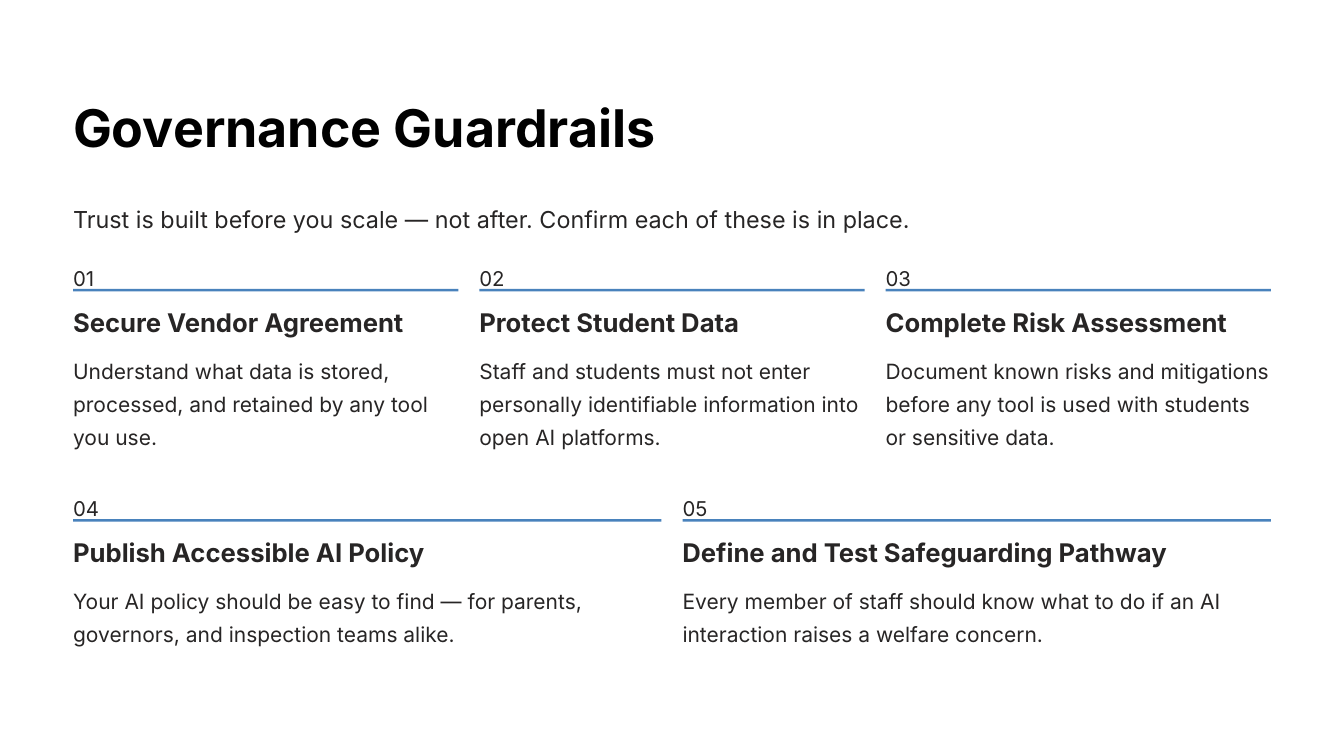
import pptx
import pptx.util
import pptx.dml.color
import pptx.enum.shapes

TITLE = "Governance Guardrails"
LEAD = "Trust is built before you scale — not after. Confirm each of these is in place."
ROWS = [
    (3.06, 1.19, [
        ("01", "Secure Vendor Agreement", 4,
         "Understand what data is stored, processed, and retained by any tool you use."),
        ("02", "Protect Student Data", 3.14,
         "Staff and students must not enter personally identifiable information into open AI platforms."),
        ("03", "Complete Risk Assessment", 4.13,
         "Document known risks and mitigations before any tool is used with students or sensitive data."),
    ]),
    (5.8, 0.79, [
        ("04", "Publish Accessible AI Policy", 4.25,
         "Your AI policy should be easy to find — for parents, governors, and inspection teams alike."),
        ("05", "Define and Test Safeguarding Pathway", 5.86,
         "Every member of staff should know what to do if an AI interaction raises a welfare concern."),
    ]),
]

THEME = {
    "font": "Inter",
    "paper": "FFFFFF",
    "rule": "4982BC",
    "title": (44.5, 55.5, "000000", True),
    "lead": (20, 28.5, "272525", False),
    "num": (17.5, 28.5, "272525", False),
    "head": (22, 27.5, "272525", True),
    "body": (18, 28.5, "272525", False),
}
WIDE, HIGH = 16, 9
LEFT, WIDTH, GAP = 0.87, 14.26, 0.25
Inches = pptx.util.Inches
Pt = pptx.util.Pt
color = pptx.dml.color.RGBColor.from_string


def add_text(slide, text, style, x, y, w, h, wrap=False):
    size, line, ink, bold = THEME[style]
    box = slide.shapes.add_textbox(Inches(x), Inches(y), Inches(w), Inches(h))
    frame = box.text_frame
    frame.text = text
    frame.word_wrap = wrap
    frame.margin_left = frame.margin_right = 0
    frame.margin_top = frame.margin_bottom = 0
    para = frame.paragraphs[0]
    para.line_spacing = Pt(line)
    font = para.runs[0].font
    font.name = THEME["font"]
    font.size = Pt(size)
    font.bold = bold
    font.color.rgb = color(ink)


def add_rect(slide, fill, x, y, w, h):
    rect = slide.shapes.add_shape(
        pptx.enum.shapes.MSO_SHAPE.RECTANGLE,
        Inches(x), Inches(y), Inches(w), Inches(h))
    rect.shadow.inherit = False
    rect.fill.solid()
    rect.fill.fore_color.rgb = color(THEME[fill])
    rect.line.fill.background()


def main():
    deck = pptx.Presentation()
    deck.slide_width, deck.slide_height = Inches(WIDE), Inches(HIGH)
    slide = deck.slides.add_slide(deck.slide_layouts[6])

    add_rect(slide, "paper", 0, 0, WIDE, HIGH)
    add_text(slide, TITLE, "title", LEFT, 1.11, 6.96, 0.78)
    add_text(slide, LEAD, "lead", LEFT, 2.38, WIDTH, 0.4)
    for top, depth, cards in ROWS:
        wide = (WIDTH - GAP * (len(cards) - 1)) / len(cards)
        for col, (num, head, span, body) in enumerate(cards):
            x = LEFT + col * (wide + GAP)
            add_text(slide, num, "num", x, top, 0.35, 0.31)
            add_rect(slide, "rule", x, top + 0.38, wide, 0.03)
            add_text(slide, head, "head", x, top + 0.58, span, 0.39)
            add_text(slide, body, "body", x, top + 1.11, wide, depth, True)
    deck.save("out.pptx")


if __name__ == "__main__":
    main()
